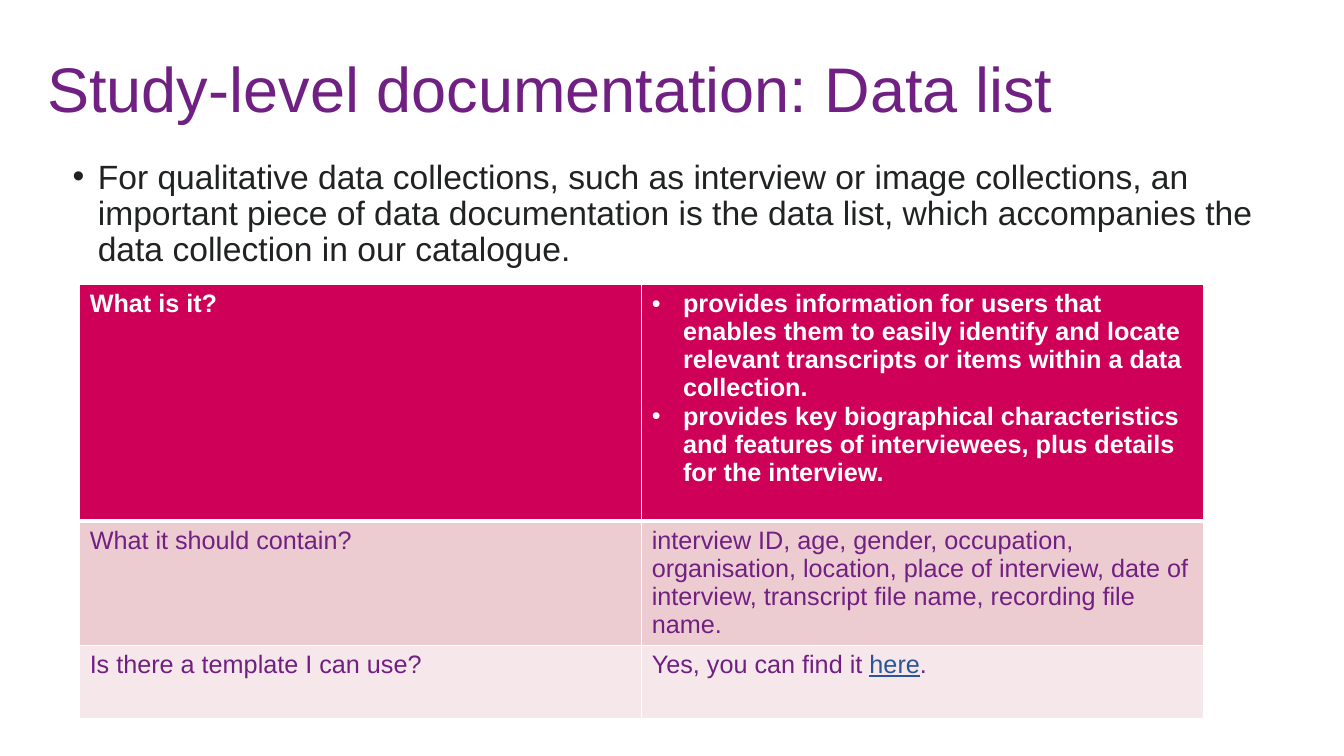
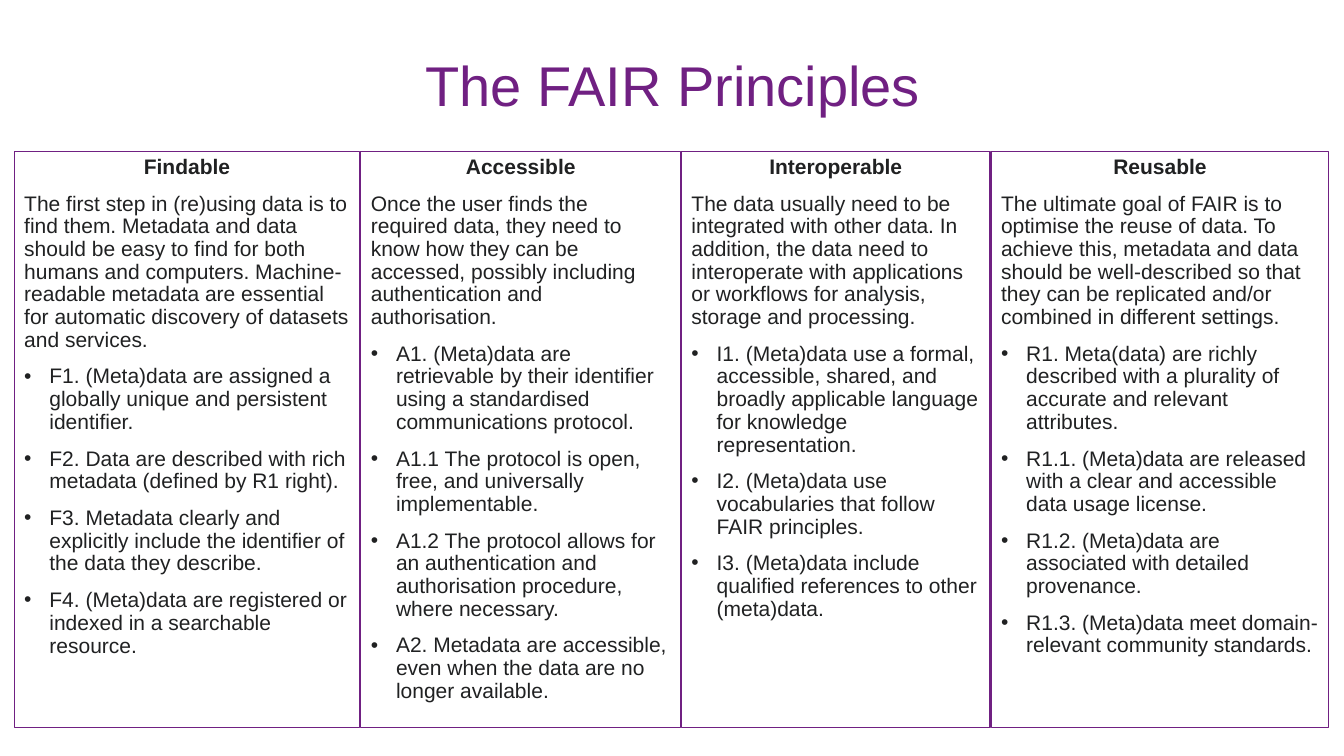
from lxml.etree import SubElement
from pptx import Presentation
from pptx.dml.color import RGBColor
from pptx.enum.shapes import MSO_SHAPE
from pptx.enum.text import MSO_ANCHOR, MSO_AUTO_SIZE, PP_ALIGN
from pptx.oxml.ns import qn
from pptx.util import Pt

PX = 9144
FONT = "Arial"
COLORS = {
    "title": "702082", "body": "212322", "column": "202122", "white": "FFFFFF",
    "header": "CE0057", "band": "EDCCD1", "pale": "F6E7EA", "link": "2B5696",
}

DATA_LIST_ROWS = [
    (235, "header", "white", True, [["What is it?"]], [
        ["provides information for users that enables them to easily identify and locate "
         "relevant transcripts or items within a data collection."],
        ["provides key biographical characteristics and features of interviewees, "
         "plus details for the interview."]]),
    (123, "band", "title", False, [["What it should contain?"]], [
        ["interview ID, age, gender, occupation, organisation, location, place of interview, "
         "date of interview, transcript file name, recording file name."]]),
    (73, "pale", "title", False, [["Is there a template I can use?"]], [
        ["Yes, you can find it ", "here", "."]]),
]

FAIR_COLUMNS = [
    (343, "Findable",
     "The first step in (re)using data is to find them. Metadata and data should be easy to find "
     "for both humans and computers. Machine-readable metadata are essential for automatic "
     "discovery of datasets and services.",
     ["F1. (Meta)data are assigned a globally unique and persistent identifier.",
      "F2. Data are described with rich metadata (defined by R1 right).",
      "F3. Metadata clearly and explicitly include the identifier of the data they describe.",
      "F4. (Meta)data are registered or indexed in a searchable resource."]),
    (317, "Accessible",
     "Once the user finds the required data, they need to know how they can be accessed, "
     "possibly including authentication and authorisation.",
     ["A1. (Meta)data are retrievable by their identifier using a standardised "
      "communications protocol.",
      "A1.1 The protocol is open, free, and universally implementable.",
      "A1.2 The protocol allows for an authentication and authorisation procedure, "
      "where necessary.",
      "A2. Metadata are accessible, even when the data are no longer available."]),
    (306, "Interoperable",
     "The data usually need to be integrated with other data. In addition, the data need to "
     "interoperate with applications or workflows for analysis, storage and processing.",
     ["I1. (Meta)data use a formal, accessible, shared, and broadly applicable language "
      "for knowledge representation.",
      "I2. (Meta)data use vocabularies that follow FAIR principles.",
      "I3. (Meta)data include qualified references to other (meta)data."]),
    (335, "Reusable",
     "The ultimate goal of FAIR is to optimise the reuse of data. To achieve this, metadata and "
     "data should be well-described so that they can be replicated and/or combined in "
     "different settings.",
     ["R1. Meta(data) are richly described with a plurality of accurate and relevant attributes.",
      "R1.1. (Meta)data are released with a clear and accessible data usage license.",
      "R1.2. (Meta)data are associated with detailed provenance.",
      "R1.3. (Meta)data meet domain-relevant community standards."]),
]


def rgb(name):
    """Return the named colour."""
    return RGBColor.from_string(COLORS[name])


def place(sp, box):
    """Move a shape to a box given in px."""
    sp.left, sp.top, sp.width, sp.height = (v * PX for v in box)


def add_run(p, text, size, color, bold=False, underline=False):
    """Add one formatted run."""
    r = p.add_run()
    r.text = text
    f = r.font
    f.name, f.size, f.bold, f.underline = FONT, Pt(size), bold, underline
    f.color.rgb = rgb(color)


def set_bullet(p, indent=0):
    """Give a paragraph a hanging bullet, or none when indent is 0."""
    pPr = p._p.get_or_add_pPr()
    pPr.set("marL", str(indent * PX))
    pPr.set("indent", str(-indent * PX))
    if indent:
        SubElement(pPr, qn("a:buFont"), typeface=FONT)
        SubElement(pPr, qn("a:buChar"), char="•")
    else:
        SubElement(pPr, qn("a:buNone"))


def next_paragraph(tf):
    """Return the empty first paragraph or a new one."""
    p = tf.paragraphs[0]
    return tf.add_paragraph() if p.runs else p


def add_paragraph(tf, text, size, color, indent=0, bold=False, align=PP_ALIGN.LEFT):
    """Add a body paragraph with the shared spacing."""
    p = next_paragraph(tf)
    p.alignment, p.line_spacing, p.space_before = align, 0.9, Pt(10)
    set_bullet(p, indent)
    add_run(p, text, size, color, bold)


def setup_frame(sp, anchor):
    """Wrap the text of a shape at a fixed size."""
    tf = sp.text_frame
    tf.word_wrap, tf.auto_size, tf.vertical_anchor = True, MSO_AUTO_SIZE.NONE, anchor
    return tf


def add_title(s, box, text, size, align):
    """Fill the title placeholder."""
    sp = s.shapes.title
    place(sp, box)
    p = setup_frame(sp, MSO_ANCHOR.MIDDLE).paragraphs[0]
    p.alignment, p.line_spacing = align, 0.9
    add_run(p, text, size, "title")


def set_borders(cell, bottom):
    """Draw white cell borders with the given bottom width in points."""
    tcPr = cell._tc.get_or_add_tcPr()
    for side, width in (("L", 1), ("R", 1), ("T", 1), ("B", bottom)):
        ln = SubElement(tcPr, qn(f"a:ln{side}"), w=str(Pt(width)))
        fill = SubElement(ln, qn("a:solidFill"))
        SubElement(fill, qn("a:srgbClr"), val=COLORS["white"])


def fill_cell(cell, paragraphs, fill, color, bold):
    """Fill a table cell, bulleting it when it has several paragraphs."""
    set_borders(cell, 3 if bold else 1)
    cell.fill.solid()
    cell.fill.fore_color.rgb = rgb(fill)
    for runs in paragraphs:
        p = next_paragraph(cell.text_frame)
        if len(paragraphs) > 1:
            set_bullet(p, 31)
        for text in runs:
            link = text == "here"
            add_run(p, text, 18, "link" if link else color, bold, link)


def add_data_table(s, box):
    """Add the table of questions and answers."""
    x, y, w, h = (v * PX for v in box)
    table = s.shapes.add_table(len(DATA_LIST_ROWS), 2, x, y, w, h).table
    for i, (height, fill, color, bold, *cells) in enumerate(DATA_LIST_ROWS):
        table.rows[i].height = height * PX
        for j, paragraphs in enumerate(cells):
            fill_cell(table.cell(i, j), paragraphs, fill, color, bold)


def fill_column(sp, box, heading, intro, points):
    """Style an outlined column and fill in one principle."""
    place(sp, box)
    sp.fill.background()
    sp.line.color.rgb = rgb("title")
    sp.line.width = Pt(0.75)
    tf = setup_frame(sp, MSO_ANCHOR.TOP)
    add_paragraph(tf, heading, 15, "column", bold=True, align=PP_ALIGN.CENTER)
    add_paragraph(tf, intro, 15, "column")
    for point in points:
        add_paragraph(tf, point, 15, "column", indent=25)


def add_columns(s, box, gap):
    """Set the principles side by side from the left of the box."""
    x, y, _, h = box
    for i, (w, *texts) in enumerate(FAIR_COLUMNS):
        if i:
            sp = s.shapes.add_shape(MSO_SHAPE.RECTANGLE, 0, 0, 0, 0)
            sp.shadow.inherit = False
        else:
            sp = s.placeholders[1]
        fill_column(sp, (x, y, w, h), *texts)
        x += w + gap


def data_list_slide(prs):
    """Build the slide on the data list."""
    s = prs.slides.add_slide(prs.slide_layouts[1])
    add_title(s, (37, 29, 1200, 125), "Study-level documentation: Data list", 45, PP_ALIGN.LEFT)
    body = s.placeholders[1]
    place(body, (62, 154, 1200, 562))
    add_paragraph(
        setup_frame(body, MSO_ANCHOR.TOP),
        "For qualitative data collections, such as interview or image collections, an important "
        "piece of data documentation is the data list, which accompanies the data collection "
        "in our catalogue.", 24, "body", indent=25)
    add_data_table(s, (79, 282, 1115, 431))


def fair_slide(prs):
    """Build the slide on the four principles."""
    s = prs.slides.add_slide(prs.slide_layouts[1])
    add_title(s, (92, 32, 1150, 112), "The FAIR Principles", 40, PP_ALIGN.CENTER)
    add_columns(s, (14, 150, 1304, 572), 1)


def main():
    """Build and save the presentation."""
    prs = Presentation()
    prs.slide_width, prs.slide_height = 1333 * PX, 750 * PX
    data_list_slide(prs)
    fair_slide(prs)
    prs.save("out.pptx")


if __name__ == "__main__":
    main()
